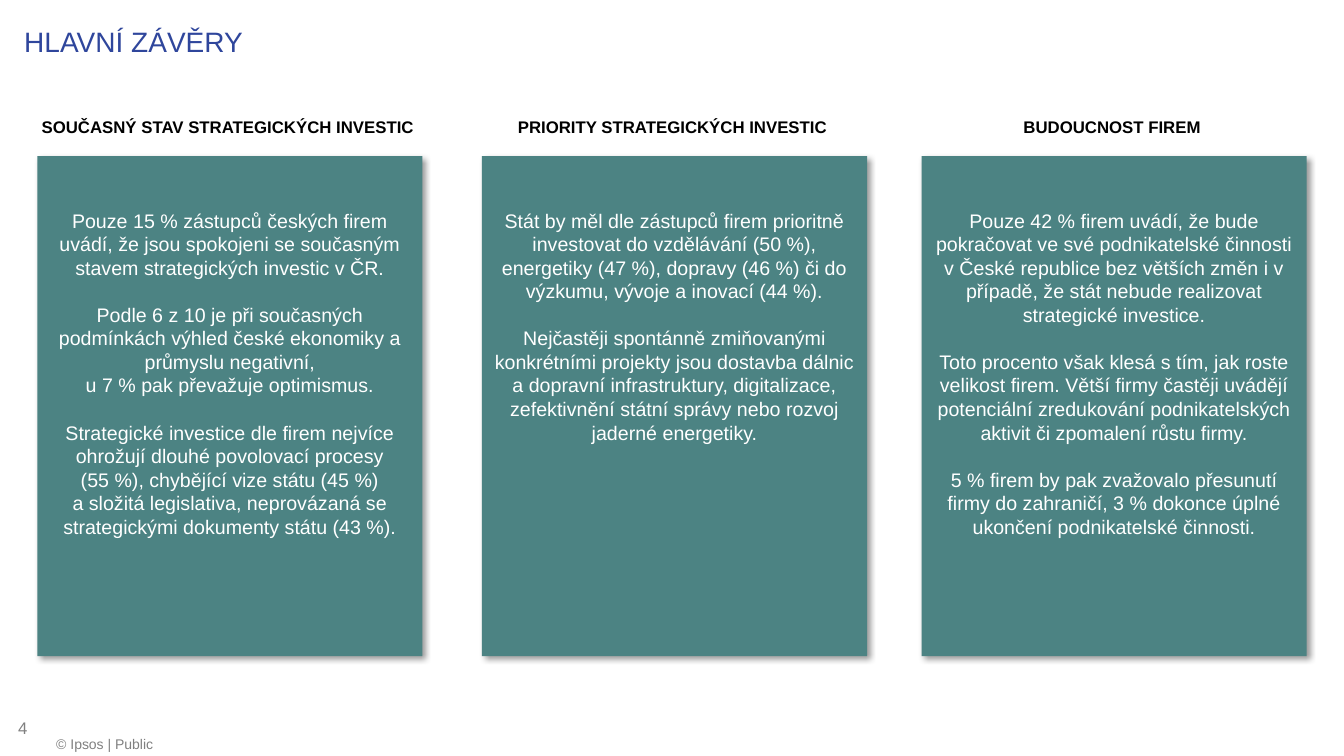
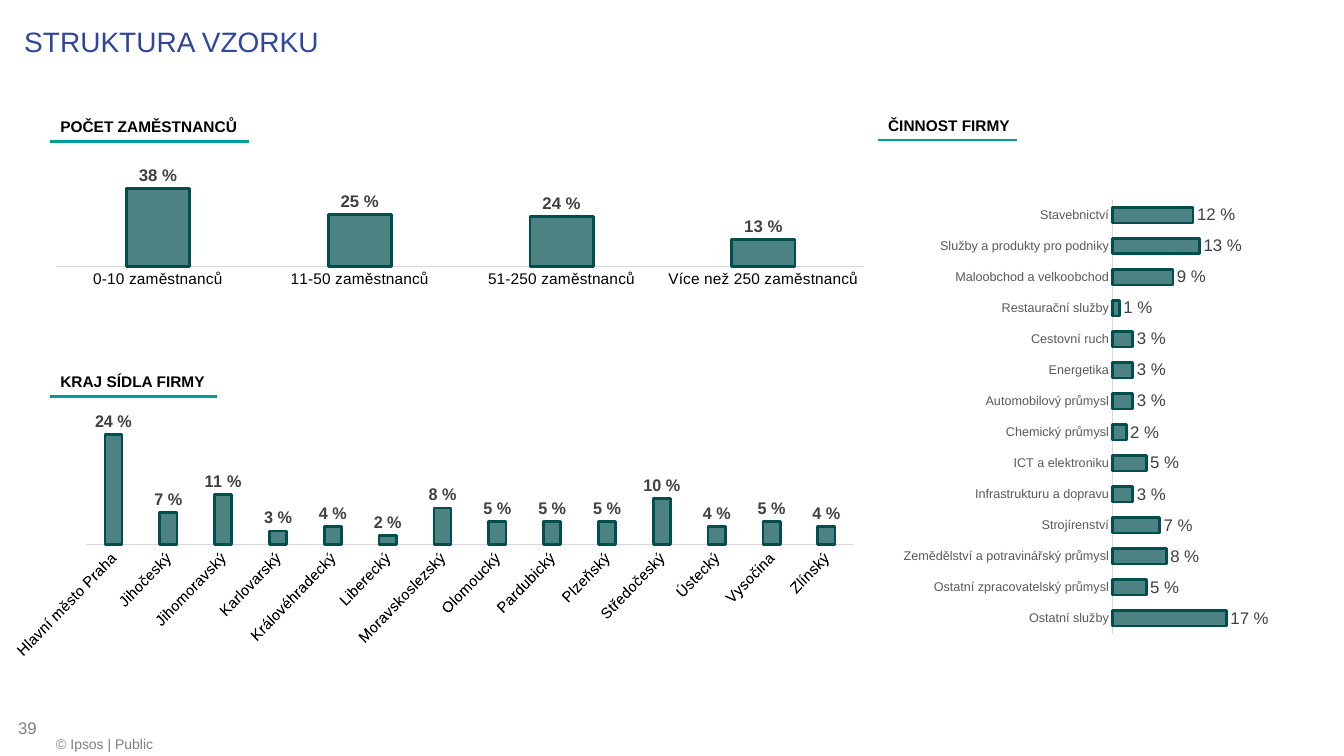
"""Build two survey slides: key findings and sample structure."""
import pptx
import pptx.chart.data
import pptx.dml.color
import pptx.enum.chart
import pptx.enum.dml
import pptx.enum.shapes
import pptx.enum.text
import pptx.oxml
import pptx.oxml.ns
import pptx.util
from lxml import etree

PX = 9144
FONT = "Arial"
COLORS = {
    "title": "2F469C", "card": "4C8383", "bar": "004E4E", "rule": "009D9C",
    "axis": "D9D9D9", "label": "404040", "muted": "595959", "footer": "808080",
    "black": "000000", "white": "FFFFFF",
}
FOOTER = "© Ipsos | Public"
NUMBER_FORMAT = '#,##0" %";\\-#,##0'
CHART = pptx.enum.chart.XL_CHART_TYPE
ALIGN = pptx.enum.text.PP_ALIGN
ANCHOR = pptx.enum.text.MSO_ANCHOR

FINDINGS = {"title": "HLAVNÍ ZÁVĚRY", "page": "4"}
CARD_TOP, CARD_W, CARD_H = 155, 382, 496
CARDS = [
    (37, "SOUČASNÝ STAV STRATEGICKÝCH INVESTIC", [
        "Pouze 15 % zástupců českých firem uvádí, že jsou spokojeni se současným "
        "stavem strategických investic v ČR.",
        "Podle 6 z 10 je při současných podmínkách výhled české ekonomiky a "
        "průmyslu negativní,\vu 7 % pak převažuje optimismus.",
        "Strategické investice dle firem nejvíce ohrožují dlouhé povolovací procesy\v"
        "(55 %), chybějící vize státu (45 %)\va složitá legislativa, neprovázaná se "
        "strategickými dokumenty státu (43 %).",
    ]),
    (478, "PRIORITY STRATEGICKÝCH INVESTIC", [
        "Stát by měl dle zástupců firem prioritně investovat do vzdělávání (50 %), "
        "energetiky (47 %), dopravy (46 %) či do výzkumu, vývoje a inovací (44 %).",
        "Nejčastěji spontánně zmiňovanými konkrétními projekty jsou dostavba dálnic "
        "a dopravní infrastruktury, digitalizace, zefektivnění státní správy nebo "
        "rozvoj jaderné energetiky.",
    ]),
    (914, "BUDOUCNOST FIREM", [
        "Pouze 42 % firem uvádí, že bude pokračovat ve své podnikatelské činnosti "
        "v České republice bez větších změn i v případě, že stát nebude realizovat "
        "strategické investice.",
        "Toto procento však klesá s tím, jak roste velikost firem. Větší firmy "
        "častěji uvádějí potenciální zredukování podnikatelských aktivit či "
        "zpomalení růstu firmy.",
        "5 % firem by pak zvažovalo přesunutí firmy do zahraničí, 3 % dokonce úplné "
        "ukončení podnikatelské činnosti.",
    ]),
]

SAMPLE = {"title": "STRUKTURA VZORKU", "page": "39"}
COLUMN_STYLE = {
    "type": CHART.COLUMN_CLUSTERED, "plot": (0.051, 0.037, 0.933, 0.466),
    "gap": 219, "overlap": -27, "size": 11, "color": "black", "bold": True,
}
BAR_STYLE = {
    "type": CHART.BAR_CLUSTERED, "plot": (0.579, 0.067, 0.297, 0.872),
    "gap": 100, "overlap": 0, "size": 9, "color": "muted", "bold": False,
}
CHARTS = [
    {"heading": "ČINNOST FIRMY", "rule": (871, 139, 138), "box": (871, 165, 402, 494),
     "max": 18, "rotation": 0, "style": BAR_STYLE, "data": [
        ("Stavebnictví", 12), ("Služby a produkty pro podniky", 13),
        ("Maloobchod a velkoobchod", 9), ("Restaurační služby", 1),
        ("Cestovní ruch", 3), ("Energetika", 3), ("Automobilový průmysl", 3),
        ("Chemický průmysl", 2), ("ICT a elektroniku", 5),
        ("Infrastrukturu a dopravu", 3), ("Strojírenství", 7),
        ("Zemědělství a potravinářský průmysl", 8),
        ("Ostatní zpracovatelský průmysl", 5), ("Ostatní služby", 17)]},
    {"heading": "POČET ZAMĚSTNANCŮ", "rule": (50, 140, 197), "box": (13, 165, 858, 197),
     "max": 45, "rotation": 0, "style": COLUMN_STYLE, "data": [
        ("0-10 zaměstnanců", 38), ("11-50 zaměstnanců", 25),
        ("51-250 zaměstnanců", 24), ("Více než 250 zaměstnanců", 13)]},
    {"heading": "KRAJ SÍDLA FIRMY", "rule": (50, 393, 165), "box": (13, 393, 847, 293),
     "max": 30, "rotation": -45, "style": COLUMN_STYLE, "data": [
        ("Hlavní město Praha", 24), ("Jihočeský", 7), ("Jihomoravský", 11),
        ("Karlovarský", 3), ("Královéhradecký", 4), ("Liberecký", 2),
        ("Moravskoslezský", 8), ("Olomoucký", 5), ("Pardubický", 5),
        ("Plzeňský", 5), ("Středočeský", 10), ("Ústecký", 4),
        ("Vysočina", 5), ("Zlínský", 4)]},
]


def px(*values):
    return [value * PX for value in values]


def rgb(name):
    return pptx.dml.color.RGBColor.from_string(COLORS[name])


def sub(parent, tag, **attrs):
    element = etree.SubElement(parent, pptx.oxml.ns.qn(tag))
    for key, value in attrs.items():
        element.set(key, str(value))
    return element


def style_font(font, size, color, bold=False):
    font.name, font.size, font.bold = FONT, pptx.util.Pt(size), bold
    font.color.rgb = rgb(color)


def fill_text(tf, paragraphs, size, color, bold=False, align=ALIGN.LEFT,
              anchor=ANCHOR.TOP, insets=(10, 5, 10, 5), gap=0):
    tf.word_wrap, tf.vertical_anchor = True, anchor
    tf.margin_left, tf.margin_top, tf.margin_right, tf.margin_bottom = px(*insets)
    tf.text = "\n".join(paragraphs)
    for i, p in enumerate(tf.paragraphs):
        p.alignment = align
        if i and gap:
            p.space_before = pptx.util.Pt(gap)
        for r in p.runs:
            style_font(r.font, size, color, bold)


def add_text(s, box, text, size, color, **options):
    sp = s.shapes.add_textbox(*px(*box))
    fill_text(sp.text_frame, [text], size, color, **options)


def add_slide(prs, title, page):
    s = prs.slides.add_slide(prs.slide_layouts[6])
    add_text(s, (46, 725, 667, 27), FOOTER, 10, "footer")
    add_text(s, (5, 702, 311, 40), page, 12, "footer",
             anchor=ANCHOR.MIDDLE, insets=(13, 7, 13, 7))
    add_text(s, (24, 14, 1285, 53), title, 20, "title",
             anchor=ANCHOR.MIDDLE, insets=(0, 5, 0, 5))
    return s


def add_card(s, left, heading, paragraphs):
    sp = s.shapes.add_shape(pptx.enum.shapes.MSO_SHAPE.RECTANGLE,
                            *px(left, CARD_TOP, CARD_W, CARD_H))
    sp.fill.solid()
    sp.fill.fore_color.rgb = rgb("card")
    sp.line.fill.background()
    sp.shadow.inherit = False
    effects = sp._element.spPr.find(pptx.oxml.ns.qn("a:effectLst"))
    shadow = sub(effects, "a:outerShdw", blurRad=pptx.util.Pt(4), dist=pptx.util.Pt(3),
                 dir=45 * 60000, algn="tl", rotWithShape=0)
    sub(sub(shadow, "a:srgbClr", val=COLORS["black"]), "a:alpha", val=40000)
    fill_text(sp.text_frame, paragraphs, 14, "white", align=ALIGN.CENTER,
              insets=(10, 52, 10, 5), gap=16.8)
    add_text(s, (left - 2, 111, CARD_W, 30), heading, 12, "black", bold=True,
             align=ALIGN.CENTER, insets=(0, 5, 0, 5))


def add_heading(s, text, left, top, width):
    add_text(s, (left, top - 29, 412, 29), text, 11, "black", bold=True)
    line = s.shapes.add_connector(pptx.enum.shapes.MSO_CONNECTOR.STRAIGHT,
                                  *px(left, top, left + width, top))
    line.line.color.rgb = rgb("rule")
    line.line.width = pptx.util.Pt(2)
    sub(line._element.spPr, "a:effectLst")


def set_plot_area(chart, plot):
    area = chart._chartSpace.chart.plotArea
    for old in area.findall(pptx.oxml.ns.qn("c:layout")):
        area.remove(old)
    layout = pptx.oxml.parse_xml(f"<c:layout {pptx.oxml.ns.nsdecls('c')}/>")
    area.insert(0, layout)
    manual = sub(layout, "c:manualLayout")
    sub(manual, "c:layoutTarget", val="inner")
    for tag in ("c:xMode", "c:yMode"):
        sub(manual, tag, val="edge")
    for tag, value in zip("xywh", plot):
        sub(manual, f"c:{tag}", val=value)


def add_chart(s, box, data, style, maximum, rotation):
    chart_data = pptx.chart.data.CategoryChartData(number_format=NUMBER_FORMAT)
    chart_data.categories = [name for name, value in data]
    chart_data.add_series("Series 1", [value for name, value in data])
    chart = s.shapes.add_chart(style["type"], *px(*box), chart_data).chart
    chart.has_legend = chart.has_title = False
    style_font(chart.font, 10, "black")
    set_plot_area(chart, style["plot"])

    axis = chart.category_axis
    axis.major_tick_mark = pptx.enum.chart.XL_TICK_MARK.NONE
    axis.reverse_order = style["type"] == CHART.BAR_CLUSTERED
    axis.format.line.color.rgb = rgb("axis")
    axis.format.line.width = pptx.util.Pt(0.75)
    style_font(axis.tick_labels.font, style["size"], style["color"])
    if rotation:
        body = axis._element.find(".//" + pptx.oxml.ns.qn("a:bodyPr"))
        body.set("rot", str(rotation * 60000))
    values = chart.value_axis
    values.visible = values.has_major_gridlines = False
    values.minimum_scale, values.maximum_scale = 0, maximum

    plot = chart.plots[0]
    plot.vary_by_categories = False
    plot.gap_width, plot.overlap = style["gap"], style["overlap"]
    bars = plot.series[0].format
    bars.fill.solid()
    bars.fill.fore_color.rgb = rgb("bar")
    color = plot.series[0]._element.spPr.find(".//" + pptx.oxml.ns.qn("a:srgbClr"))
    sub(color, "a:alpha", val=70000)
    bars.line.color.rgb = rgb("bar")
    bars.line.width = pptx.util.Pt(2)

    plot.has_data_labels = True
    labels = plot.data_labels
    labels.show_value = True
    labels.number_format, labels.number_format_is_linked = NUMBER_FORMAT, False
    labels.position = pptx.enum.chart.XL_LABEL_POSITION.OUTSIDE_END
    style_font(labels.font, 12, "label", style["bold"])


def main():
    prs = pptx.Presentation()
    prs.slide_width, prs.slide_height = px(1333, 750)
    s = add_slide(prs, **FINDINGS)
    for card in CARDS:
        add_card(s, *card)
    s = add_slide(prs, **SAMPLE)
    for item in CHARTS:
        add_chart(s, item["box"], item["data"], item["style"], item["max"], item["rotation"])
        add_heading(s, item["heading"], *item["rule"])
    prs.save("out.pptx")


if __name__ == "__main__":
    main()
